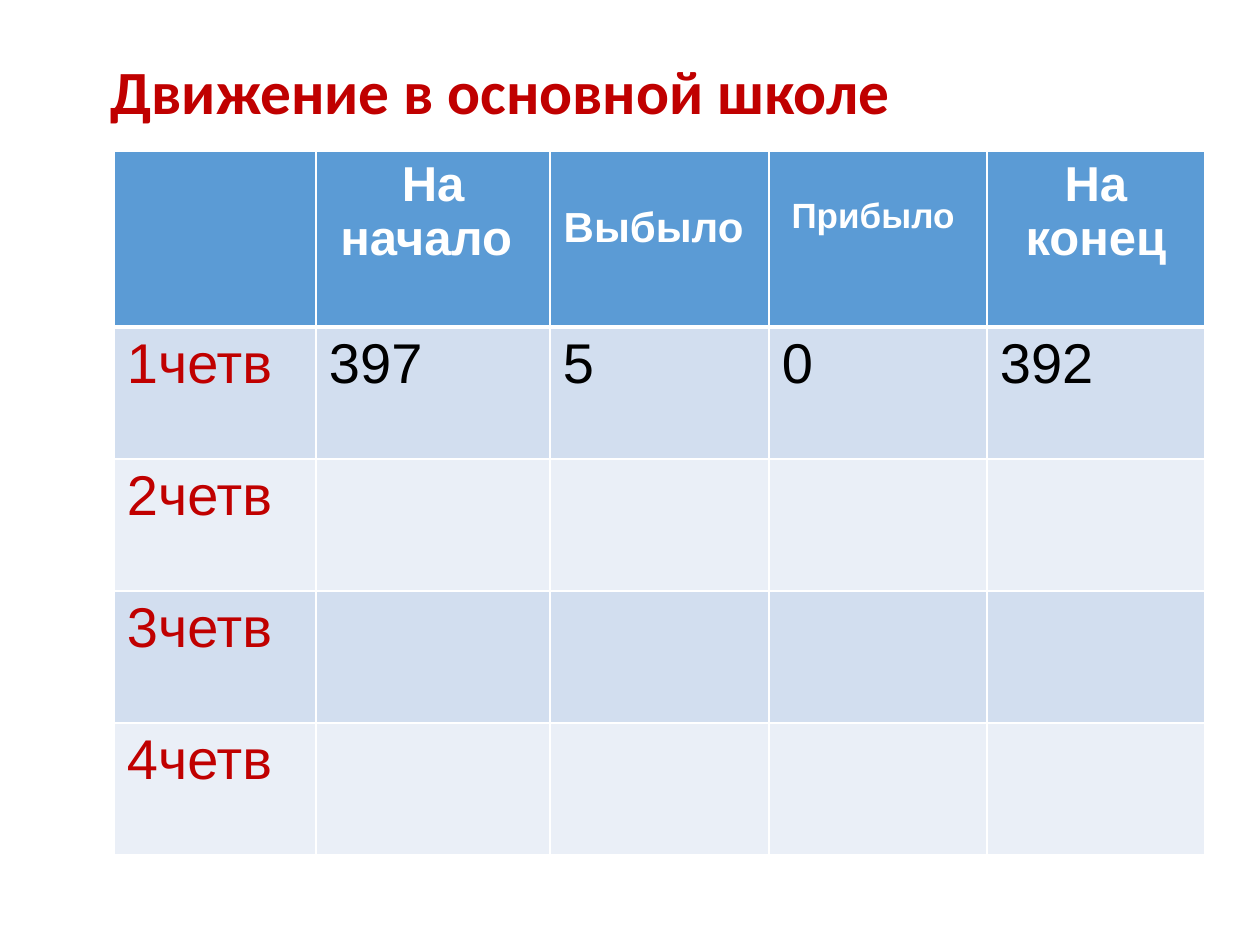
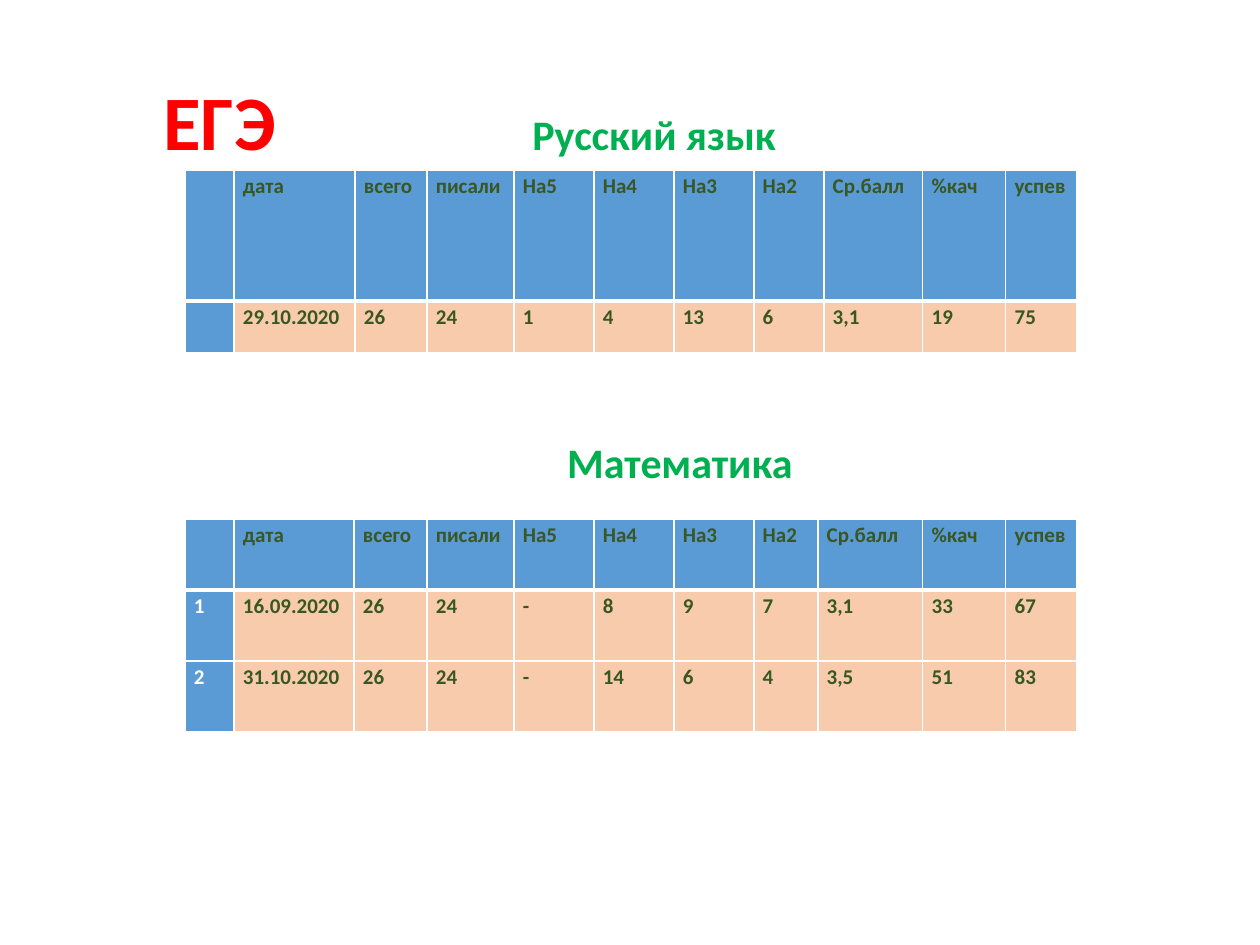
import dataclasses
import typing

import lxml.etree
import pptx
import pptx.dml.color
import pptx.enum.text
import pptx.oxml.ns
import pptx.util

EMU_PER_PX = 914400 / 126
COLORS = {
    "white": "FFFFFF",
    "black": "000000",
    "title": "C00000",
    "exam": "FF0000",
    "subject": "00B050",
    "header": "5B9BD5",
    "band_dark": "D2DEEF",
    "band_light": "EAEFF7",
    "score": "F8CBAD",
    "score_text": "385723",
}
ALIGN = pptx.enum.text.PP_ALIGN
QUARTERS = ("1четв", "2четв", "3четв", "4четв")
SCORE_HEADERS = (
    "", "дата", "всего", "писали", "На5", "На4", "На3", "На2", "Ср.балл", "%кач", "успев",
)


@dataclasses.dataclass(frozen=True)
class CellStyle:
    """Look of one table cell, with margins in px (left and right, top, bottom)."""

    fill: str
    color: str
    size: float
    font: str = "Calibri"
    bold: bool = True
    align: ALIGN = ALIGN.LEFT
    spacing: float = 1.0
    margins: tuple[int, int, int] = (13, 6, 6)


@dataclasses.dataclass(frozen=True)
class TableSpec:
    """Place, grid and rows of a table, in px."""

    left: int
    top: int
    columns: tuple[int, ...]
    heights: tuple[int, ...]
    rows: tuple[tuple[str, ...], ...]


def px(length: int) -> pptx.util.Emu:
    """Turn px into EMU."""
    return pptx.util.Emu(round(length * EMU_PER_PX))


def rgb(name: str) -> pptx.dml.color.RGBColor:
    """Look up a named colour."""
    return pptx.dml.color.RGBColor.from_string(COLORS[name])


def write_text(paragraph, text: str, *, size: float, color: str, font: str = "Calibri",
               bold: bool = True, align: ALIGN = ALIGN.LEFT, spacing: float = 1.0) -> None:
    """Add a formatted run to a paragraph."""
    paragraph.alignment = align
    paragraph.line_spacing = spacing
    run = paragraph.add_run()
    run.text = text
    run.font.size = pptx.util.Pt(size)
    run.font.name = font
    run.font.bold = bold
    run.font.color.rgb = rgb(color)


def add_text_box(slide, left: int, top: int, width: int, height: int):
    """Add a wrapping text box and return its first paragraph."""
    shape = slide.shapes.add_textbox(px(left), px(top), px(width), px(height))
    shape.text_frame.word_wrap = True
    return shape.text_frame.paragraphs[0]


def add_tab_stop(paragraph, position: int) -> None:
    """Give a paragraph one left tab stop."""
    qn = pptx.oxml.ns.qn
    stops = lxml.etree.SubElement(paragraph._p.get_or_add_pPr(), qn("a:tabLst"))
    lxml.etree.SubElement(stops, qn("a:tab"), pos=str(px(position)), algn="l")


def set_borders(cell, row: int) -> None:
    """Draw white cell borders, thick under the header row."""
    qn = pptx.oxml.ns.qn
    properties = cell._tc.get_or_add_tcPr()
    widths = {"L": 1, "R": 1, "T": 3 if row == 1 else 1, "B": 3 if row == 0 else 1}
    for side, width in widths.items():
        line = lxml.etree.SubElement(
            properties, qn(f"a:ln{side}"), w=str(pptx.util.Pt(width)))
        fill = lxml.etree.SubElement(line, qn("a:solidFill"))
        lxml.etree.SubElement(fill, qn("a:srgbClr"), val=COLORS["white"])


def add_table(slide, spec: TableSpec, style_for: typing.Callable[[int, int], CellStyle]) -> None:
    """Draw a table, asking style_for for the look of each cell."""
    table = slide.shapes.add_table(
        len(spec.heights), len(spec.columns), px(spec.left), px(spec.top),
        px(sum(spec.columns)), px(sum(spec.heights))).table
    table.first_row = table.horz_banding = False
    for column, width in zip(table.columns, spec.columns):
        column.width = px(width)
    for row, texts in enumerate(spec.rows):
        table.rows[row].height = px(spec.heights[row])
        for column, text in enumerate(texts):
            cell = table.cell(row, column)
            style = style_for(row, column)
            set_borders(cell, row)
            cell.fill.solid()
            cell.fill.fore_color.rgb = rgb(style.fill)
            side, top, bottom = style.margins
            cell.margin_left = cell.margin_right = px(side)
            cell.margin_top, cell.margin_bottom = px(top), px(bottom)
            if text:
                write_text(
                    cell.text_frame.paragraphs[0], text, size=style.size, color=style.color,
                    font=style.font, bold=style.bold, align=style.align, spacing=style.spacing)


def movement_style(row: int, column: int) -> CellStyle:
    """Style the pupil movement table."""
    if row == 0:
        size, top = {2: (24, 54), 3: (20, 46)}.get(column, (28, 6))
        return CellStyle("header", "white", size, "Arial", align=ALIGN.CENTER,
                         margins=(13, top, 6))
    fill = "band_dark" if row % 2 else "band_light"
    return CellStyle(fill, "black" if column else "title", 32, "Arial", bold=False)


def score_style(row: int, column: int) -> CellStyle:
    """Style an exam score table."""
    fill = "score" if row and column else "header"
    color = "score_text" if column else "white"
    return CellStyle(fill, color, 12, spacing=1.15, margins=(9, 0, 0))


def build_movement_slide(slide) -> None:
    """Fill the slide on pupil movement."""
    title = add_text_box(slide, 98, 55, 1162, 89)
    write_text(title, "Движение в основной школе", size=35.1, color="title", spacing=0.9)
    first, *later = QUARTERS
    add_table(slide, TableSpec(
        left=114, top=151,
        columns=(202, 234, 219, 218, 218),
        heights=(176,) + (132,) * len(QUARTERS),
        rows=(
            ("", "На начало ", "Выбыло ", "Прибыло ", "На конец"),
            (first, "397", "5", "0", "392"),
            *((quarter, "", "", "", "") for quarter in later),
        )), movement_style)


def build_exam_slide(slide) -> None:
    """Fill the slide on exam scores."""
    add_table(slide, TableSpec(
        left=185, top=519,
        columns=(49, 120, 73, 87, 80, 80, 80, 64, 105, 83, 71),
        heights=(71,) * 3,
        rows=(
            SCORE_HEADERS,
            ("1", "16.09.2020", "26", "24", "-", "8", "9", "7", "3,1", "33", "67"),
            ("2", "31.10.2020", "26", "24", "-", "14", "6", "4", "3,5", "51", "83"),
        )), score_style)
    add_table(slide, TableSpec(
        left=185, top=170,
        columns=(49, 121, 72, 87, 80, 80, 80, 70, 99, 83, 71),
        heights=(131, 52),
        rows=(
            SCORE_HEADERS,
            ("", "29.10.2020", "26", "24", "1", "4", "13", "6", "3,1", "19", "75"),
        )), score_style)
    subject = add_text_box(slide, 489, 430, 316, 63)
    write_text(subject, "Математика", size=24, color="subject", align=ALIGN.RIGHT)
    heading = add_text_box(slide, 151, 67, 694, 106)
    heading.line_spacing = 1.0
    add_tab_stop(heading, 369)
    write_text(heading, "ЕГЭ", size=44, color="exam")
    write_text(heading, "\tРусский язык", size=24, color="subject")


def main() -> None:
    """Build and save the presentation."""
    presentation = pptx.Presentation()
    presentation.slide_width, presentation.slide_height = px(1260), px(945)
    for build in (build_movement_slide, build_exam_slide):
        build(presentation.slides.add_slide(presentation.slide_layouts[6]))
    presentation.save("out.pptx")


if __name__ == "__main__":
    main()
